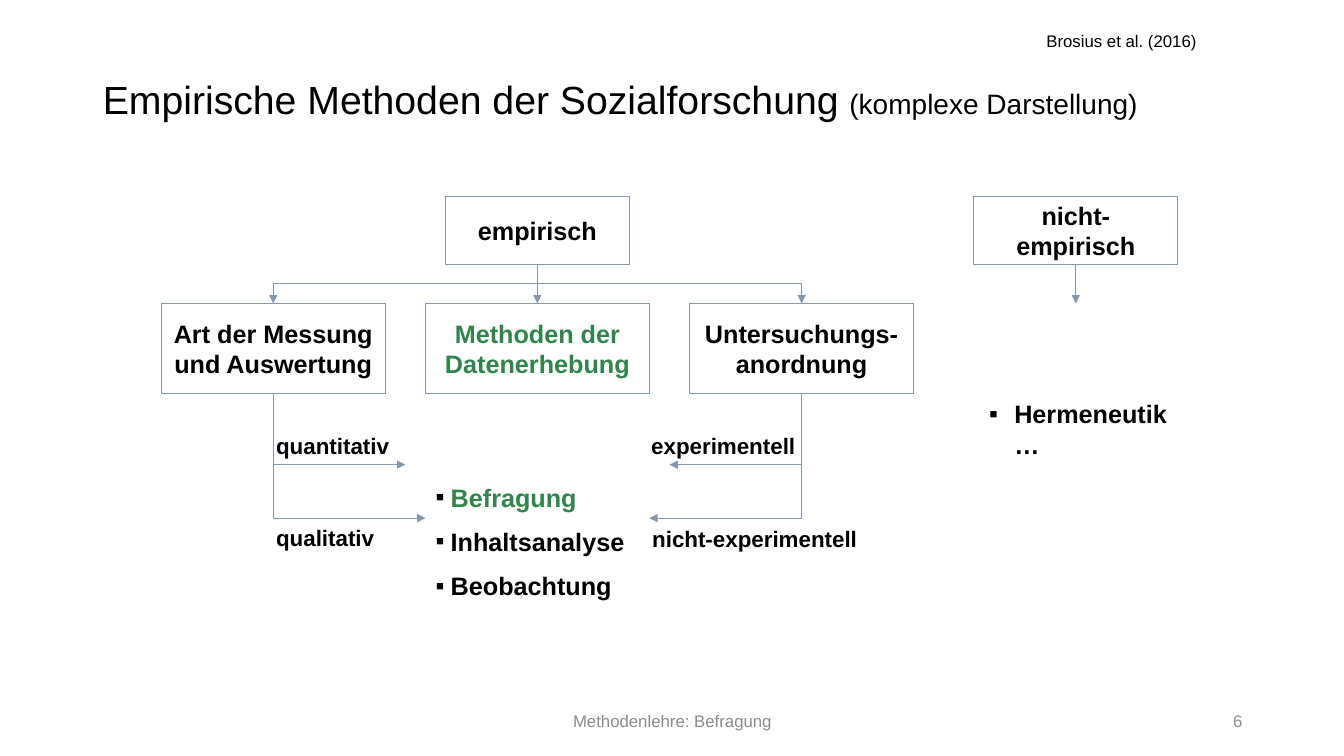
from lxml import etree
from pptx import Presentation
from pptx.dml.color import RGBColor
from pptx.enum.shapes import MSO_CONNECTOR, MSO_SHAPE
from pptx.enum.text import MSO_ANCHOR, MSO_AUTO_SIZE, PP_ALIGN
from pptx.oxml.ns import qn
from pptx.util import Inches, Pt

STRAIGHT, ELBOW = MSO_CONNECTOR.STRAIGHT, MSO_CONNECTOR.ELBOW
RECTANGLE = MSO_SHAPE.RECTANGLE
MIDDLE, BOTTOM = MSO_ANCHOR.MIDDLE, MSO_ANCHOR.BOTTOM
LEFT, CENTER, RIGHT, JUSTIFY = PP_ALIGN.LEFT, PP_ALIGN.CENTER, PP_ALIGN.RIGHT, PP_ALIGN.JUSTIFY
NO_FIT = MSO_AUTO_SIZE.NONE

BLACK, GREEN, GRAY, STEEL, WHITE = "000000", "2F854C", "8C8C8C", "8497B0", "FFFFFF"
color = RGBColor.from_string


def add_span(para, text, size, tint=BLACK, bold=False):
    span = para.add_run()
    span.text = text
    span.font.name = "Arial"
    span.font.size = Pt(size)
    span.font.bold = bold
    span.font.color.rgb = color(tint)


def style_arrow(arrow):
    arrow.line.color.rgb = color(STEEL)
    arrow.line.width = Pt(0.75)
    etree.SubElement(arrow.line._get_or_add_ln(), qn("a:tailEnd"), type="triangle")
    etree.SubElement(arrow._element.spPr, qn("a:effectLst"))


deck = Presentation()
deck.slide_width, deck.slide_height = Inches(13.33), Inches(7.5)
page = deck.slides.add_slide(deck.slide_layouts[3])
title, methods_list, hermeneutics_list = page.placeholders

title.left, title.top = Inches(0.92), Inches(0.4)
title.width, title.height = Inches(11.5), Inches(0.87)
title.text_frame.auto_size = NO_FIT
title.text_frame.vertical_anchor = BOTTOM
para = title.text_frame.paragraphs[0]
para.alignment = LEFT
para.line_spacing = 0.9
add_span(para, "Empirische Methoden der Sozialforschung ", 28)
add_span(para, "(komplexe Darstellung)", 20)

lists = [
    (methods_list, 4.22, 4.08, 2.22, 2.13, 0.5, 0.15, 0.15, LEFT,
     [("Befragung", GREEN), ("Inhaltsanalyse", BLACK), ("Beobachtung", BLACK)]),
    (hermeneutics_list, 9.46, 3.01, 2.42, 2.49, 0.05, 0.5, 0.25, JUSTIFY,
     [("Hermeneutik…", BLACK)]),
]
for box, left, top, width, height, inset, indent, hanging, align, items in lists:
    box.left, box.top = Inches(left), Inches(top)
    box.width, box.height = Inches(width), Inches(height)
    frame = box.text_frame
    frame.auto_size = NO_FIT
    frame.vertical_anchor = MIDDLE
    frame.margin_top = Inches(inset)
    for index, (text, tint) in enumerate(items):
        para = frame.paragraphs[0] if index == 0 else frame.add_paragraph()
        props = para._p.get_or_add_pPr()
        props.set("marL", str(Inches(indent)))
        props.set("indent", str(-Inches(hanging)))
        bullet_color = etree.SubElement(props, qn("a:buClr"))
        etree.SubElement(bullet_color, qn("a:srgbClr"), val=BLACK)
        etree.SubElement(props, qn("a:buFont"), typeface="Arial")
        etree.SubElement(props, qn("a:buChar"), char="▪")
        para.alignment = align
        para.space_before = Pt(10 if index else 0)
        add_span(para, text, 18, tint, True)

boxes = {}
BRANCH_LEFT, BRANCH_STEP = 1.6, 2.62
nodes = [
    ("empirisch", 4.42, 1.95, 1.82, 0.67, BLACK),
    ("nicht-empirisch", 9.66, 1.95, 2.02, 0.67, BLACK),
]
branches = [("Art der Messung und Auswertung", BLACK),
            ("Methoden der Datenerhebung", GREEN),
            ("Untersuchungs-anordnung", BLACK)]
for index, (text, tint) in enumerate(branches):
    nodes.append((text, BRANCH_LEFT + index * BRANCH_STEP, 3.01, 2.22, 0.89, tint))
for text, left, top, width, height, tint in nodes:
    box = page.shapes.add_shape(RECTANGLE, Inches(left), Inches(top), Inches(width), Inches(height))
    box.shadow.inherit = False
    box.fill.solid()
    box.fill.fore_color.rgb = color(WHITE)
    box.line.color.rgb = color(STEEL)
    box.line.width = Pt(0.75)
    box.text_frame.word_wrap = True
    box.text_frame.vertical_anchor = MIDDLE
    para = box.text_frame.paragraphs[0]
    para.alignment = CENTER
    add_span(para, text, 18, tint, True)
    boxes[text] = box

down_arrow = page.shapes.add_connector(STRAIGHT, Inches(5.33), Inches(2.62), Inches(5.33), Inches(3.01))
down_arrow.begin_connect(boxes["empirisch"], 2)
down_arrow.end_connect(boxes["Methoden der Datenerhebung"], 0)
style_arrow(down_arrow)

open_arrow = page.shapes.add_connector(STRAIGHT, Inches(10.67), Inches(2.62), Inches(10.67), Inches(3.01))
open_arrow.begin_connect(boxes["nicht-empirisch"], 2)
style_arrow(open_arrow)

elbows = [
    ("bentConnector3", 5.33, 2.62, 2.71, 3.01),
    ("bentConnector3", 5.33, 2.62, 7.95, 3.01),
    ("bentConnector2", 2.71, 3.9, 4.22, 5.14),
    ("bentConnector2", 2.71, 3.9, 4.02, 4.61),
    ("bentConnector2", 7.95, 3.9, 6.44, 5.14),
    ("bentConnector2", 7.95, 3.9, 6.64, 4.61),
]
for preset, start_x, start_y, end_x, end_y in elbows:
    center_x, center_y = (start_x + end_x) / 2, (start_y + end_y) / 2
    half_width, half_height = (end_y - start_y) / 2, abs(end_x - start_x) / 2
    side = 1 if end_x > start_x else -1
    elbow = page.shapes.add_connector(
        ELBOW,
        Inches(center_x + side * half_width), Inches(center_y - half_height),
        Inches(center_x - side * half_width), Inches(center_y + half_height))
    properties = elbow._element.spPr
    properties.find(qn("a:xfrm")).set("rot", "16200000" if side == 1 else "5400000")
    properties.find(qn("a:prstGeom")).set("prst", preset)
    style_arrow(elbow)

labels = [
    ("quantitativ", 2.64, 4.16, 1.61, 0.53, 16, BLACK, True, LEFT, MIDDLE),
    ("qualitativ", 2.64, 5.07, 1.61, 0.53, 16, BLACK, True, LEFT, MIDDLE),
    ("experimentell", 6.36, 4.16, 1.81, 0.53, 16, BLACK, True, LEFT, MIDDLE),
    ("nicht-experimentell", 6.37, 5.08, 2.42, 0.53, 16, BLACK, True, LEFT, MIDDLE),
    ("Brosius et al. (2016)", 10.28, 0.08, 1.96, 0.47, 12, BLACK, False, LEFT, BOTTOM),
    ("Methodenlehre: Befragung", 2.08, 6.95, 9.18, 0.4, 12, GRAY, False, CENTER, MIDDLE),
    ("6", 11.34, 6.95, 1.08, 0.4, 12, GRAY, False, RIGHT, MIDDLE),
]
for text, left, top, width, height, size, tint, bold, align, anchor in labels:
    box = page.shapes.add_textbox(Inches(left), Inches(top), Inches(width), Inches(height))
    box.text_frame.word_wrap = True
    box.text_frame.vertical_anchor = anchor
    para = box.text_frame.paragraphs[0]
    para.alignment = align
    add_span(para, text, size, tint, bold)

deck.save("out.pptx")
